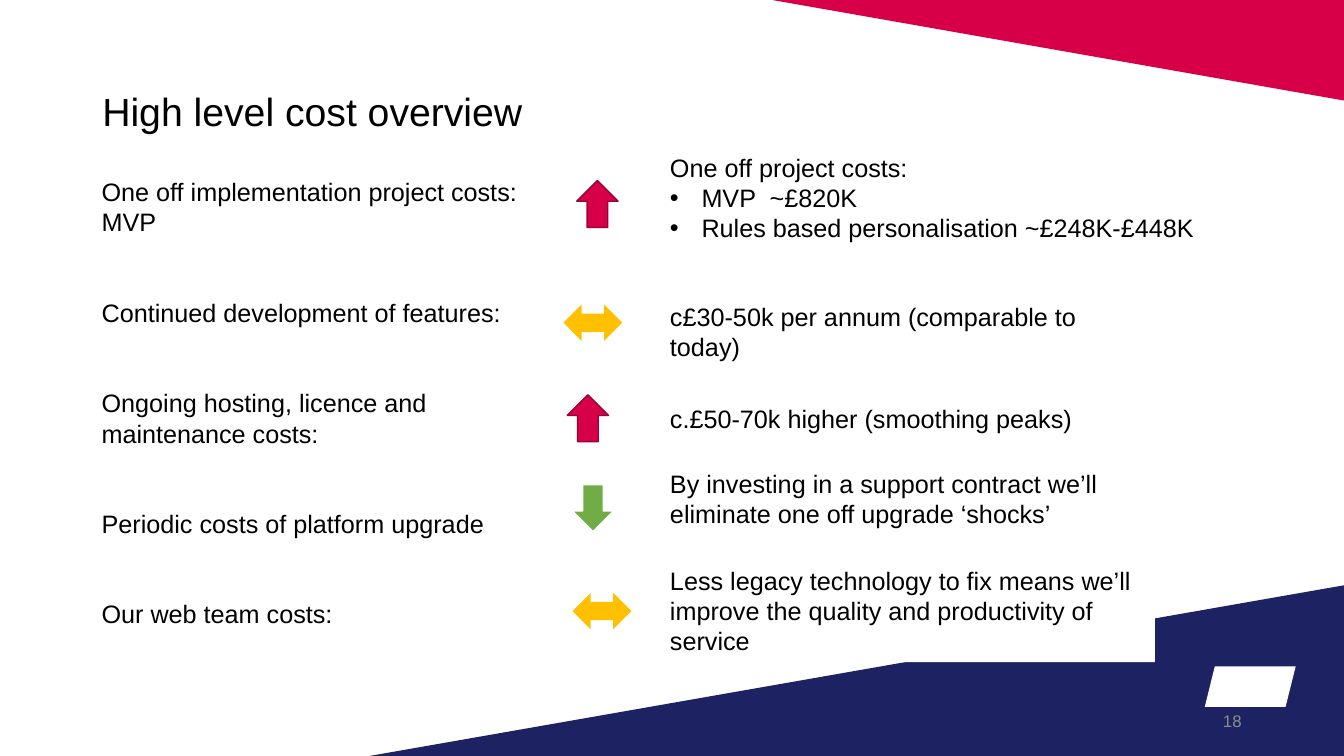
from lxml.etree import SubElement
from pptx import Presentation
from pptx.dml.color import RGBColor
from pptx.enum.shapes import MSO_SHAPE as Preset
from pptx.enum.text import MSO_ANCHOR as Anchor, PP_ALIGN as Align
from pptx.oxml.ns import qn
from pptx.util import Pt

COLORS = {
    "navy": "1D2362", "crimson": "D70048", "crimson_edge": "9F0035",
    "amber": "FFC000", "green": "70AD47", "white": "FFFFFF",
    "black": "000000", "grey": "8C8C8C",
}
WIDTH, HEIGHT = 960, 540
FONT = "Arial"
COST_LABELS = [
    "One off implementation project costs: MVP",
    "Continued development of features:",
    "Ongoing hosting, licence and maintenance costs:",
    "Periodic costs of platform upgrade",
    "Our web team costs:",
]
TREND_STYLES = {
    "higher": (Preset.UP_ARROW, 29.5, 33.5, "crimson", "crimson_edge"),
    "same": (Preset.LEFT_RIGHT_ARROW, 42, 26, "amber", None),
    "lower": (Preset.DOWN_ARROW, 29.5, 33.5, "green", "white"),
}
TRENDS = [
    ("higher", 412, 129), ("same", 402.5, 217.5), ("higher", 405.2, 282),
    ("lower", 408.8, 346.2), ("same", 409, 423.5),
]
COST_NOTES = [
    (105, 397.5, 94, ["One off project costs:", "• MVP  ~£820K",
                      "• Rules based personalisation ~£248K-£448K"]),
    (211.7, 353.5, 51, ["c£30-50k per annum (comparable to today)"]),
    (284.8, 353.5, 29, ["c.£50-70k higher (smoothing peaks)"]),
    (330.8, 350, 51, ["By investing in a support contract we’ll "
                      "eliminate one off upgrade ‘shocks’"]),
    (400, 353.5, 73, ["Less legacy technology to fix means we’ll improve "
                      "the quality and productivity of service"]),
]


def rgb(name):
    """Return the named colour."""
    return RGBColor.from_string(COLORS[name])


def paint(shape, fill, line=None):
    """Give a shape a flat fill and an optional thin outline."""
    shape.shadow.inherit = False
    shape.fill.solid()
    shape.fill.fore_color.rgb = rgb(fill)
    if line:
        shape.line.color.rgb = rgb(line)
        shape.line.width = Pt(1)
    else:
        shape.line.fill.background()


def add_bullet(paragraph, indent=22.5):
    """Set a hanging round bullet on a paragraph."""
    properties = paragraph._p.get_or_add_pPr()
    properties.set("marL", str(Pt(indent)))
    properties.set("indent", str(-Pt(indent)))
    SubElement(properties, qn("a:buFont")).set("typeface", FONT)
    SubElement(properties, qn("a:buChar")).set("char", "•")


def add_text(slide, box, lines, size=18, color="black", anchor=Anchor.TOP,
             align=Align.LEFT, gap=0, spacing=None):
    """Add a wrapped text box with one paragraph for each line."""
    shape = slide.shapes.add_textbox(*map(Pt, box))
    frame = shape.text_frame
    frame.word_wrap = True
    frame.vertical_anchor = anchor
    for index, line in enumerate(lines):
        paragraph = frame.add_paragraph() if index else frame.paragraphs[0]
        paragraph.alignment = align
        if index and gap:
            paragraph.space_before = Pt(gap)
        if spacing:
            paragraph.line_spacing = spacing
        if line.startswith("• "):
            add_bullet(paragraph)
        run = paragraph.add_run()
        run.text = line.removeprefix("• ")
        run.font.name = FONT
        run.font.size = Pt(size)
        run.font.color.rgb = rgb(color)
    return shape


def add_triangle(slide, points, color):
    """Add a filled triangle through three points."""
    corners = [(Pt(x), Pt(y)) for x, y in points]
    builder = slide.shapes.build_freeform(*corners[0])
    builder.add_line_segments(corners[1:], close=True)
    paint(builder.convert_to_shape(), color)


def add_backdrop(slide, width, height):
    """Add the corner wedges and the emblem block."""
    right = width + 32
    add_triangle(slide, [(264, height), (right, 412.5), (right, height)], "navy")
    add_triangle(slide, [(551.5, 0), (width + 1, 0), (width + 1, 72)], "crimson")
    emblem = slide.shapes.add_shape(
        Preset.PARALLELOGRAM, Pt(width - 99.5), Pt(height - 64), Pt(65), Pt(29))
    paint(emblem, "white")


def add_header(slide, left, top, width, height):
    """Add the slide title."""
    add_text(slide, (left, top, width, height), ["High level cost overview"],
             size=28, anchor=Anchor.MIDDLE, spacing=0.9)


def add_labels(slide, left, top, width, height):
    """Add the cost categories, two lines apart."""
    add_text(slide, (left, top, width, height), COST_LABELS, gap=43)


def add_trends(slide):
    """Add the arrows that show how each cost changes."""
    for trend, left, top in TRENDS:
        preset, width, height, fill, line = TREND_STYLES[trend]
        arrow = slide.shapes.add_shape(
            preset, Pt(left), Pt(top), Pt(width), Pt(height))
        paint(arrow, fill, line)


def add_notes_column(slide, left):
    """Add the cost notes, the last on a white panel."""
    for top, width, height, lines in COST_NOTES:
        note = add_text(slide, (left, top, width, height), lines)
    paint(note, "white")


def add_page_number(slide, left, top, width, height):
    """Add the page number."""
    add_text(slide, (left, top, width, height), ["18"], size=12, color="grey",
             anchor=Anchor.MIDDLE, align=Align.RIGHT)


def main():
    """Build and save the presentation."""
    presentation = Presentation()
    presentation.slide_width, presentation.slide_height = Pt(WIDTH), Pt(HEIGHT)
    slide = presentation.slides.add_slide(presentation.slide_layouts[6])
    add_backdrop(slide, WIDTH, HEIGHT)
    add_header(slide, 66, 28.8, 828, 104.4)
    add_page_number(slide, 678, 500.5, 216, 28.8)
    add_labels(slide, 65.5, 122.5, 330, 356)
    add_trends(slide)
    add_notes_column(slide, 471.5)
    presentation.save("out.pptx")


if __name__ == "__main__":
    main()
